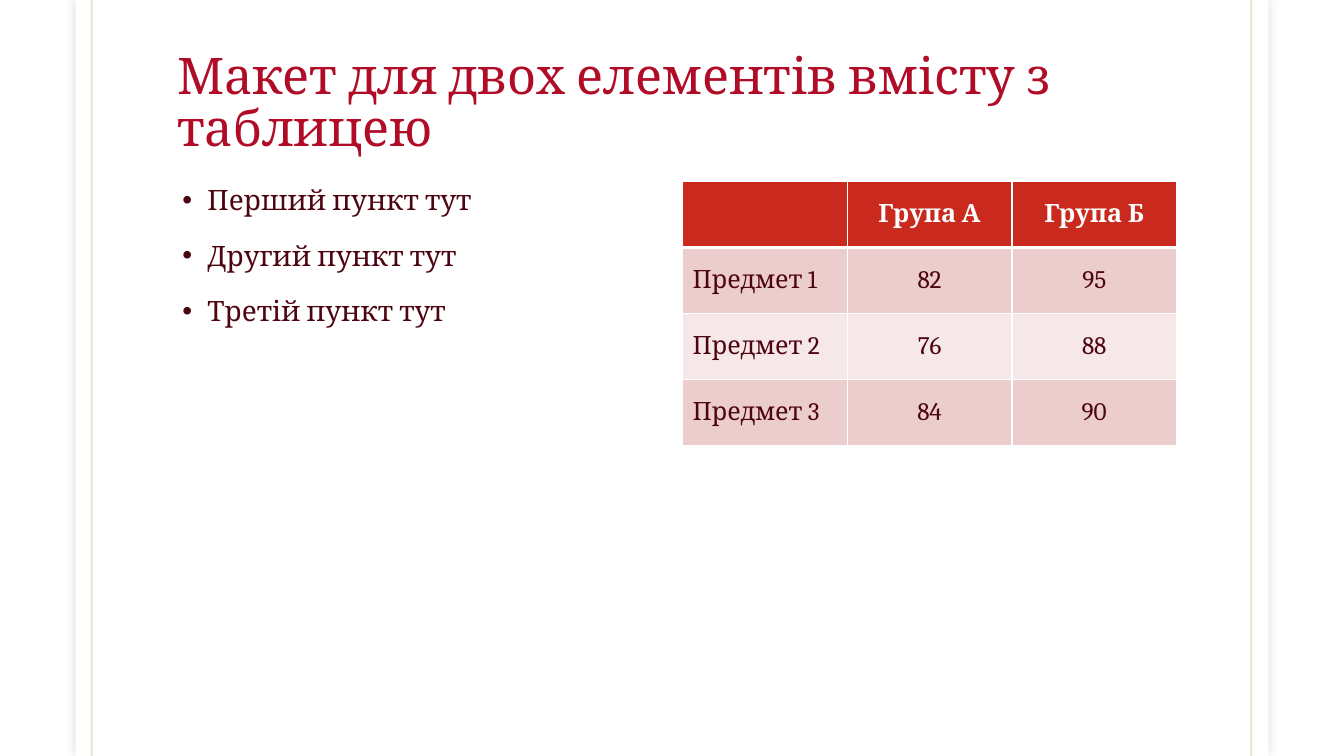
from lxml import etree
from pptx import Presentation
from pptx.dml.color import RGBColor
from pptx.enum.shapes import MSO_CONNECTOR, MSO_SHAPE
from pptx.enum.text import MSO_ANCHOR, PP_ALIGN
from pptx.oxml.ns import qn
from pptx.util import Inches, Pt

RECTANGLE = MSO_SHAPE.RECTANGLE
STRAIGHT = MSO_CONNECTOR.STRAIGHT
TOP, MIDDLE, BOTTOM = MSO_ANCHOR.TOP, MSO_ANCHOR.MIDDLE, MSO_ANCHOR.BOTTOM
LEFT, CENTER = PP_ALIGN.LEFT, PP_ALIGN.CENTER

WHITE = RGBColor(0xFF, 0xFF, 0xFF)
CRIMSON = RGBColor(0xB1, 0x0C, 0x27)
MAROON = RGBColor(0x4D, 0x05, 0x11)
SHADOW_BROWN = RGBColor(0x65, 0x15, 0x0F)
RULE_GOLD = RGBColor(0x79, 0x54, 0x0B)
HEADER_RED = RGBColor(0xCA, 0x2A, 0x1E)
BAND_DARK = RGBColor(0xEC, 0xCD, 0xCD)
BAND_LIGHT = RGBColor(0xF6, 0xE8, 0xE8)

FONT = "Cambria"
SLIDE_WIDTH, SLIDE_HEIGHT = 13.33, 7.5
CONTENT_LEFT, CONTENT_TOP, COLUMN_WIDTH = 1.66, 1.8, 4.9
TABLE_LEFT, TABLE_HEIGHT = 6.77, 2.62

TITLE = "Макет для двох елементів вмісту з таблицею"
POINTS = ["Перший пункт тут", "Другий пункт тут", "Третій пункт тут"]
SCORES = [
    ["", "Група А", "Група Б"],
    ["Предмет 1", "82", "95"],
    ["Предмет 2", "76", "88"],
    ["Предмет 3", "84", "90"],
]


def add_element(parent, tag, **attributes):
    return etree.SubElement(parent, qn(tag), attributes)


def add_bullet(paragraph):
    properties = paragraph._p.get_or_add_pPr()
    properties.set("marL", str(Inches(0.3)))
    properties.set("indent", str(Inches(-0.25)))
    color = add_element(properties, "a:buClr")
    add_element(color, "a:srgbClr", val=str(MAROON))
    add_element(properties, "a:buFont", typeface="Arial")
    add_element(properties, "a:buChar", char="•")


def write_text(frame, text, *, size, color, bold=False, align=LEFT,
               line_spacing=None, space_before=0, bullet=False):
    """Fill a text frame with one paragraph for each line of the text."""
    for index, line in enumerate(text.split("\n")):
        paragraph = frame.add_paragraph() if index else frame.paragraphs[0]
        paragraph.alignment = align
        if line_spacing:
            paragraph.line_spacing = line_spacing
        if index:
            paragraph.space_before = Pt(space_before)
        if bullet:
            add_bullet(paragraph)
        run = paragraph.add_run()
        run.text = line
        run.font.name = FONT
        run.font.size = Pt(size)
        run.font.bold = bold
        run.font.color.rgb = color


def add_text_box(slide, left, top, width, height, text, anchor=TOP, **text_format):
    box = slide.shapes.add_textbox(Inches(left), Inches(top),
                                   Inches(width), Inches(height))
    box.text_frame.word_wrap = True
    box.text_frame.vertical_anchor = anchor
    write_text(box.text_frame, text, **text_format)


def add_page_panel(slide, left, width):
    """Add the white full-height page with a soft shadow on its sides."""
    panel = slide.shapes.add_shape(RECTANGLE, Inches(left), 0,
                                   Inches(width), Inches(SLIDE_HEIGHT))
    panel.fill.solid()
    panel.fill.fore_color.rgb = WHITE
    panel.line.fill.background()
    panel.shadow.inherit = False
    effects = panel._element.spPr.find(qn("a:effectLst"))
    shadow = add_element(effects, "a:outerShdw", blurRad=str(Pt(7)), dist="0",
                         dir="0", algn="ctr", rotWithShape="0")
    color = add_element(shadow, "a:srgbClr", val=str(SHADOW_BROWN))
    add_element(color, "a:alpha", val="15000")


def add_page_rule(slide, x):
    rule = slide.shapes.add_connector(STRAIGHT, Inches(x), 0,
                                      Inches(x), Inches(SLIDE_HEIGHT))
    rule.line.width = Pt(1.5)
    rule.line.color.rgb = RULE_GOLD
    properties = rule._element.spPr
    color = properties.find(".//" + qn("a:srgbClr"))
    add_element(color, "a:alpha", val="15000")
    add_element(properties, "a:effectLst")


def set_borders(cell, **widths):
    """Draw white borders; widths in points are keyed L, R, T and B."""
    properties = cell._tc.get_or_add_tcPr()
    for side, width in widths.items():
        border = add_element(properties, "a:ln" + side, w=str(Pt(width)))
        fill = add_element(border, "a:solidFill")
        add_element(fill, "a:srgbClr", val=str(WHITE))


def add_score_table(slide):
    row_count, column_count = len(SCORES), len(SCORES[0])
    table = slide.shapes.add_table(
        row_count, column_count, Inches(TABLE_LEFT), Inches(CONTENT_TOP),
        Inches(COLUMN_WIDTH), Inches(TABLE_HEIGHT)).table
    for row, values in enumerate(SCORES):
        is_header = row == 0
        if is_header:
            fill_color = HEADER_RED
        else:
            fill_color = BAND_DARK if row % 2 else BAND_LIGHT
        for column, value in enumerate(values):
            cell = table.cell(row, column)
            set_borders(cell, L=1, R=1, T=3 if row == 1 else 1,
                        B=3 if is_header else 1)
            cell.fill.solid()
            cell.fill.fore_color.rgb = fill_color
            cell.vertical_anchor = MIDDLE
            if value:
                write_text(cell.text_frame, value, size=18, bold=is_header,
                           color=WHITE if is_header else MAROON,
                           align=CENTER if column else LEFT)


def main():
    presentation = Presentation()
    presentation.slide_width = Inches(SLIDE_WIDTH)
    presentation.slide_height = Inches(SLIDE_HEIGHT)
    slide = presentation.slides.add_slide(presentation.slide_layouts[6])
    slide.background.fill.solid()
    slide.background.fill.fore_color.rgb = WHITE

    add_page_panel(slide, 0.75, 11.83)
    for rule_x in (0.91, 12.41):
        add_page_rule(slide, rule_x)
    add_text_box(slide, CONTENT_LEFT, 0.35, 10, 1.25, TITLE, anchor=BOTTOM,
                 size=36, color=CRIMSON, line_spacing=0.85)
    add_text_box(slide, CONTENT_LEFT, CONTENT_TOP, COLUMN_WIDTH, 4.95,
                 "\n".join(POINTS), size=20, color=MAROON,
                 line_spacing=0.9, space_before=18, bullet=True)
    add_score_table(slide)
    presentation.save("out.pptx")


if __name__ == "__main__":
    main()
